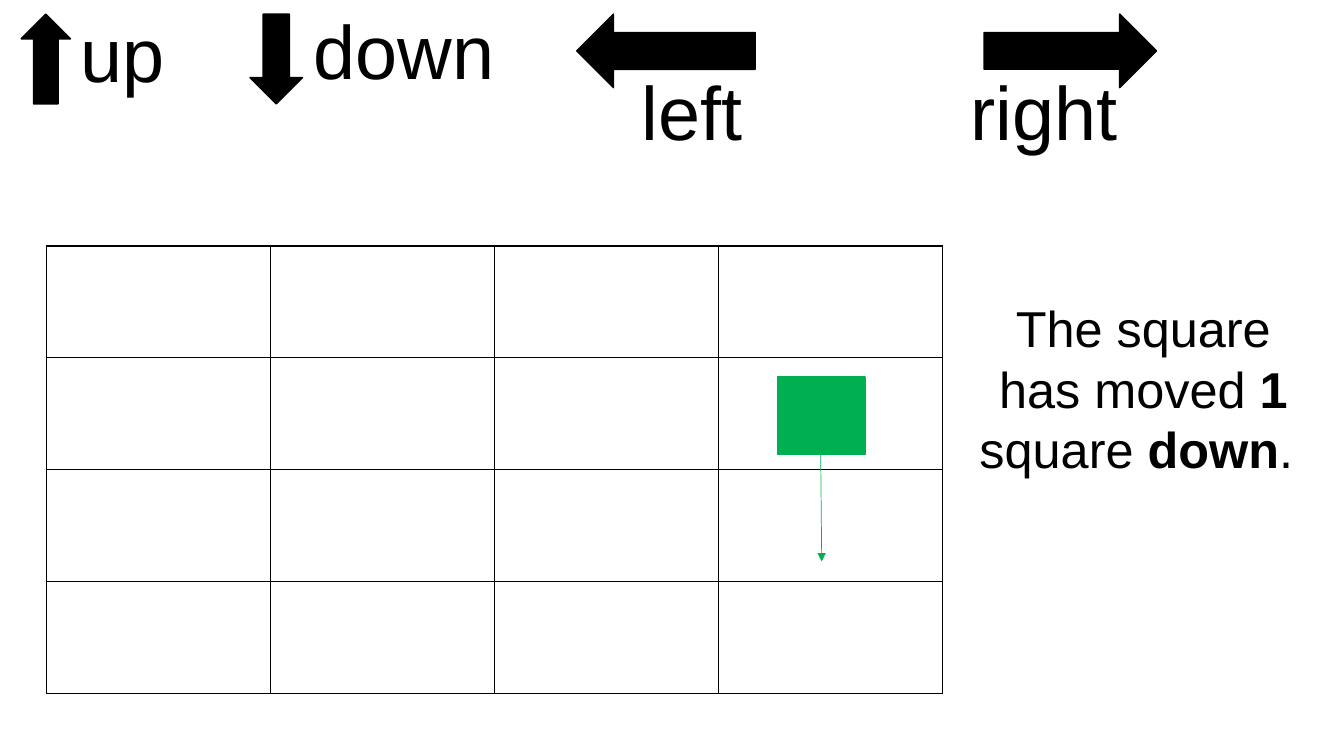
from lxml import etree
from pptx import Presentation
from pptx.dml.color import RGBColor
from pptx.enum import shapes, text
from pptx.oxml.ns import qn
from pptx.util import Inches, Pt

BLACK = RGBColor(0x00, 0x00, 0x00)
GREEN = RGBColor(0x00, 0xB0, 0x50)

presentation = Presentation()
presentation.slide_width = Inches(13.33)
presentation.slide_height = Inches(7.5)
slide = presentation.slides.add_slide(presentation.slide_layouts[6])


def add_text(runs, left, top, width, height, size, wrap=False):
    """Add a centred text box; runs are (words, bold) pairs."""
    box = slide.shapes.add_textbox(Inches(left), Inches(top), Inches(width), Inches(height))
    frame = box.text_frame
    frame.word_wrap = wrap
    frame.auto_size = text.MSO_AUTO_SIZE.SHAPE_TO_FIT_TEXT
    paragraph = frame.paragraphs[0]
    paragraph.alignment = text.PP_ALIGN.CENTER
    for words, bold in runs:
        run = paragraph.add_run()
        run.text = words
        run.font.name = "Arial"
        run.font.size = Pt(size)
        run.font.bold = bold
        run.font.color.rgb = BLACK


def add_solid(kind, left, top, width, height, color, rotation=0):
    """Add a preset shape filled and outlined in one colour."""
    shape = slide.shapes.add_shape(kind, Inches(left), Inches(top), Inches(width), Inches(height))
    shape.shadow.inherit = False
    shape.rotation = rotation
    shape.fill.solid()
    shape.fill.fore_color.rgb = color
    shape.line.color.rgb = color
    shape.line.width = Pt(1)


# Direction arrows: one up arrow, turned
for left, top, width, height, rotation in [
    (0.21, 0.14, 0.49, 0.89, 0),
    (2.48, 0.14, 0.52, 0.89, 180),
    (6.24, -0.38, 0.73, 1.77, 270),
    (10.25, -0.35, 0.73, 1.71, 90),
]:
    add_solid(shapes.MSO_SHAPE.UP_ARROW, left, top, width, height, BLACK, rotation)

# Direction words
for word, left, top, width in [
    ("up", 0.7, 0.02, 1.04),
    ("down", 3, -0.01, 2.01),
    ("left", 6.26, 0.59, 1.21),
    ("right", 9.52, 0.59, 1.67),
]:
    add_text([(word, False)], left, top, width, 1.01, size=54)

# Empty 4 by 4 grid with black borders
grid_frame = slide.shapes.add_table(4, 4, Inches(0.46), Inches(2.44), Inches(8.89), Inches(4.44))
grid = grid_frame.table
grid.first_row = False
grid.horz_banding = False
for cell in grid.iter_cells():
    properties = cell._tc.get_or_add_tcPr()
    for side in ("a:lnL", "a:lnR", "a:lnT", "a:lnB"):
        border = etree.SubElement(properties, qn(side), w=str(Pt(1)))
        border_fill = etree.SubElement(border, qn("a:solidFill"))
        etree.SubElement(border_fill, qn("a:srgbClr"), val=str(BLACK))
    cell.fill.background()

# Green square and its move
add_solid(shapes.MSO_SHAPE.RECTANGLE, 7.71, 3.74, 0.87, 0.77, GREEN)
move = slide.shapes.add_connector(
    shapes.MSO_CONNECTOR.STRAIGHT, Inches(8.14), Inches(4.51), Inches(8.15), Inches(5.57)
)
move.line.color.rgb = GREEN
move.line.width = Pt(0.5)
etree.SubElement(move.line._get_or_add_ln(), qn("a:tailEnd"), type="triangle")
etree.SubElement(move._element.spPr, qn("a:effectLst"))

# Sentence describing the move
sentence = [
    ("The square has moved ", False),
    ("1", True),
    (" square ", False),
    ("down", True),
    (". ", False),
]
add_text(sentence, 9.52, 2.9, 3.64, 1.92, size=36, wrap=True)

presentation.save("out.pptx")
